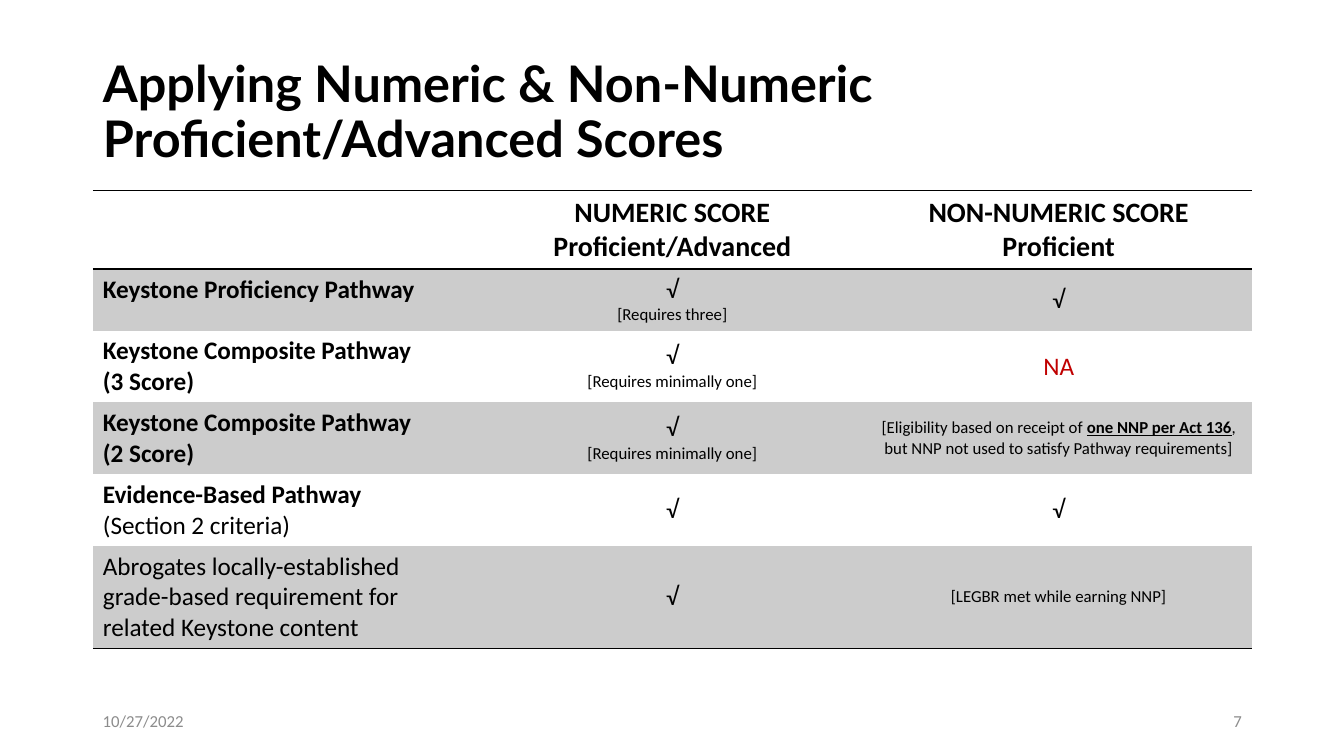
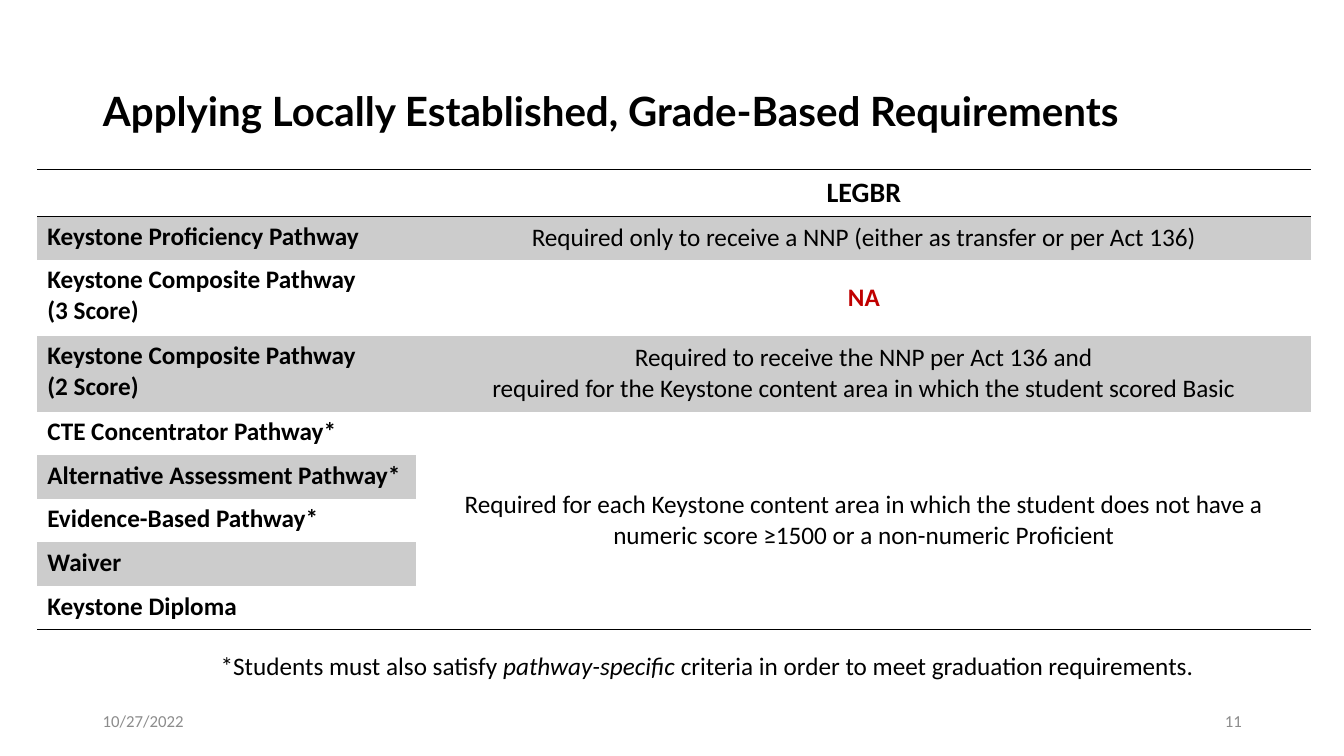
from dataclasses import dataclass

from lxml import etree
from pptx import Presentation
from pptx.dml.color import RGBColor
from pptx.enum import text
from pptx.oxml.ns import qn
from pptx.util import Cm, Pt

BLACK = RGBColor(0x00, 0x00, 0x00)
BAND = RGBColor(0xCC, 0xCC, 0xCC)
RED = RGBColor(0xC0, 0x00, 0x00)
GREY = RGBColor(0x8C, 0x8C, 0x8C)
TITLE_FONT, BODY_FONT = "Lato", "Calibri"
PLAIN_TABLE_STYLE = "{2D5ABB26-0587-4C30-8999-92F81FD0307C}"
TITLE_ONLY_LAYOUT = 5

MARGIN, CONTENT_WIDTH = Cm(2.34), Cm(29.21)
FOOTER_TOP, FOOTER_WIDTH, FOOTER_HEIGHT = Cm(17.65), Cm(7.62), Cm(1.02)
DATE = "10/27/2022"

LEFT, CENTER, RIGHT = (text.PP_ALIGN.LEFT, text.PP_ALIGN.CENTER,
                       text.PP_ALIGN.RIGHT)
TOP, MIDDLE = text.MSO_ANCHOR.TOP, text.MSO_ANCHOR.MIDDLE


@dataclass
class Run:
    text: str
    size: float = 18
    bold: bool = False
    italic: bool = False
    underline: bool = False
    color: RGBColor = BLACK
    font: str = BODY_FONT


def lines(*texts, **style):
    """One paragraph of a single run for each text."""
    return [[Run(t, **style)] for t in texts]


def heading(*texts):
    return lines(*texts, size=20, bold=True)


def label(*texts):
    return lines(*texts, bold=True)


def note(*texts):
    return lines(*texts, size=12)


def write(tf, paragraphs, align=LEFT):
    for i, runs in enumerate(paragraphs):
        p = tf.paragraphs[0] if i == 0 else tf.add_paragraph()
        p.alignment = align
        for run in runs:
            r = p.add_run()
            r.text = run.text
            r.font.name = run.font
            r.font.size = Pt(run.size)
            r.font.bold = run.bold
            r.font.italic = run.italic
            r.font.underline = run.underline
            r.font.color.rgb = run.color


def add_text(s, left, top, width, paragraphs, align=LEFT, anchor=MIDDLE):
    tf = s.shapes.add_textbox(left, top, width, FOOTER_HEIGHT).text_frame
    tf.word_wrap = True
    tf.vertical_anchor = anchor
    write(tf, paragraphs, align)


def add_slide(prs, title, title_size, number):
    """Add a slide with its title, date and slide number."""
    s = prs.slides.add_slide(prs.slide_layouts[TITLE_ONLY_LAYOUT])
    sp = s.shapes.title
    sp.left, sp.top, sp.width, sp.height = MARGIN, Cm(1.02), CONTENT_WIDTH, Cm(3.68)
    tf = sp.text_frame
    tf.auto_size = text.MSO_AUTO_SIZE.NONE
    tf.vertical_anchor = MIDDLE
    tf.text = title
    p = tf.paragraphs[0]
    p.alignment = LEFT
    p.line_spacing = 0.9
    for r in p.runs:
        r.font.name = TITLE_FONT
        r.font.size = Pt(title_size)
        r.font.bold = True
        r.font.color.rgb = BLACK

    add_text(s, MARGIN, FOOTER_TOP, FOOTER_WIDTH,
             lines(DATE, size=12, color=GREY))
    add_text(s, MARGIN + CONTENT_WIDTH - FOOTER_WIDTH, FOOTER_TOP, FOOTER_WIDTH,
             lines(number, size=12, color=GREY), RIGHT)
    return s


def add_border(cell, side):
    """Draw a 1 pt black line; side is T or B. Call before filling the cell."""
    ln = etree.SubElement(cell._tc.get_or_add_tcPr(), qn(f"a:ln{side}"), w=str(Pt(1)))
    fill = etree.SubElement(ln, qn("a:solidFill"))
    etree.SubElement(fill, qn("a:srgbClr"), val=str(BLACK))


def format_cell(cell, row, col, last_row):
    bottom_row = row + cell.span_height - 1
    if row == 0:
        add_border(cell, "T")
    if bottom_row in (0, last_row):
        add_border(cell, "B")
    if row % 2 and not cell.is_spanned:
        cell.fill.solid()
        cell.fill.fore_color.rgb = BAND
    else:
        cell.fill.background()
    cell.vertical_anchor = MIDDLE if col else TOP


def add_banded_table(s, left, top, widths, heights, rows, merge=None):
    """Add a ruled table; merge holds the first and last (row, column)."""
    frame = s.shapes.add_table(len(rows), len(widths), left, top,
                               sum(widths), sum(heights))
    table = frame.table
    table._tbl.tblPr.find(qn("a:tableStyleId")).text = PLAIN_TABLE_STYLE
    for column, width in zip(table.columns, widths):
        column.width = width
    for table_row, height in zip(table.rows, heights):
        table_row.height = height
    if merge:
        first, last = merge
        table.cell(*first).merge(table.cell(*last))

    for r, contents in enumerate(rows):
        for c in range(len(widths)):
            format_cell(table.cell(r, c), r, c, len(rows) - 1)
        for c, paragraphs in enumerate(contents):
            write(table.cell(r, c).text_frame, paragraphs,
                  CENTER if c else LEFT)


def add_scores_slide(prs):
    s = add_slide(prs, "Applying Numeric & Non-Numeric\vProficient/Advanced Scores",
                  36, "7")
    check = lines("√")
    needs_one = check + note("[Requires minimally one]")
    eligibility = [[
        Run("[Eligibility based on receipt of ", 12),
        Run("one NNP per Act 136", 12, bold=True, underline=True),
        Run(", but NNP not used to satisfy Pathway requirements]", 12),
    ]]
    rows = [
        [[], heading("NUMERIC SCORE", "Proficient/Advanced"),
         heading("NON-NUMERIC SCORE", "Proficient")],
        [label("Keystone Proficiency Pathway"),
         check + note("[Requires three]"), check],
        [label("Keystone Composite Pathway", "(3 Score)"),
         needs_one, lines("NA", color=RED)],
        [label("Keystone Composite Pathway", "(2 Score)"),
         needs_one, eligibility],
        [label("Evidence-Based Pathway") + lines("(Section 2 criteria)"),
         check, check],
        [lines("Abrogates locally-established grade-based requirement for "
               "related Keystone content"),
         check, note("[LEGBR met while earning NNP]")],
    ]
    heights = [Cm(h) for h in (1.98, 1.55, 1.81, 1.81, 1.81, 2.58)]
    add_banded_table(s, MARGIN, Cm(4.8), [CONTENT_WIDTH // 3] * 3, heights, rows)


def add_requirements_slide(prs):
    s = add_slide(prs, "Applying Locally Established, Grade-Based Requirements",
                  28.8, "11")
    rows = [
        [[], heading("LEGBR")],
        [label("Keystone Proficiency Pathway"),
         lines("Required only to receive a NNP (either as transfer or per Act 136)")],
        [label("Keystone Composite Pathway", "(3 Score)"),
         lines("NA", bold=True, color=RED)],
        [label("Keystone Composite Pathway", "(2 Score)"),
         lines("Required to receive the NNP per Act 136 and",
               "required for the Keystone content area in which the student "
               "scored Basic")],
        [label("CTE Concentrator Pathway*"),
         lines("Required for each Keystone content area in which the student does "
               "not have a numeric score ≥1500 or a non-numeric Proficient")],
        [label("Alternative Assessment Pathway*")],
        [label("Evidence-Based Pathway*")],
        [label("Waiver")],
        [label("Keystone Diploma")],
    ]
    single, double = Cm(1.1), Cm(1.91)
    heights = [Cm(1.18), single, double, double] + [single] * 5
    add_banded_table(s, Cm(0.94), Cm(4.27), [Cm(9.55), Cm(22.56)], heights, rows,
                     merge=((4, 1), (8, 1)))
    footnote = [[
        Run("*Students must also satisfy "),
        Run("pathway-specific", italic=True),
        Run(" criteria in order to meet graduation requirements."),
    ]]
    add_text(s, Cm(5.31), Cm(16.26), Cm(25.3), footnote, anchor=TOP)


def main():
    prs = Presentation()
    prs.slide_width, prs.slide_height = Cm(33.87), Cm(19.05)
    add_scores_slide(prs)
    add_requirements_slide(prs)
    prs.save("out.pptx")


if __name__ == "__main__":
    main()
